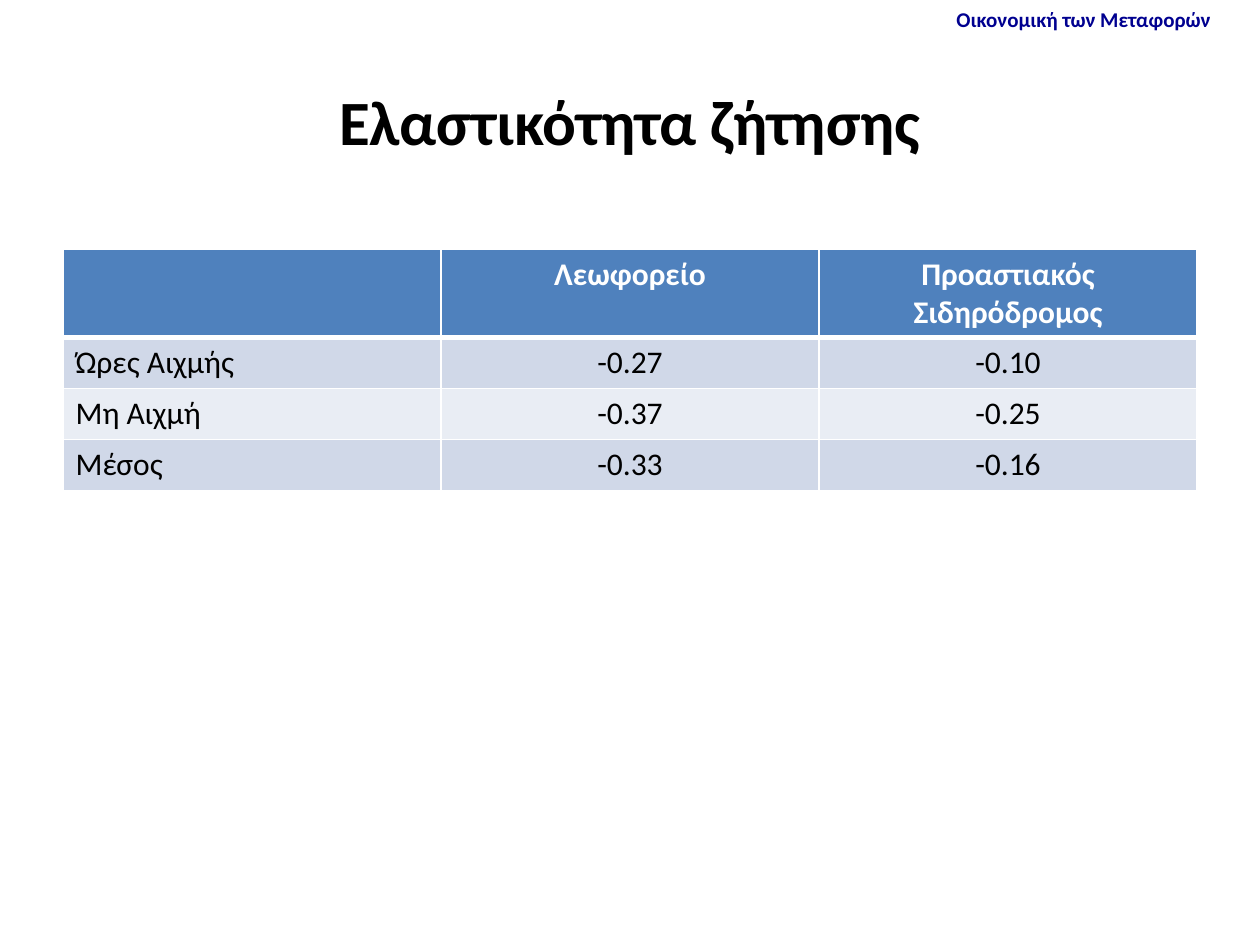
from dataclasses import dataclass

from lxml.etree import SubElement
from pptx import Presentation
from pptx.dml.color import RGBColor
from pptx.enum.text import MSO_ANCHOR, PP_ALIGN
from pptx.oxml.ns import qn
from pptx.util import Emu, Pt

EMU_PER_PX = 914400 / 126


@dataclass
class Row:
    cells: tuple[str, ...]
    fill: str
    height: int
    color: str = "000000"
    bold: bool = False
    bottom: int = 1  # border widths in points
    top: int = 1


def px(n: int) -> Emu:
    return Emu(round(n * EMU_PER_PX))


def rgb(value: str) -> RGBColor:
    return RGBColor.from_string(value)


def place(sp, left: int, top: int, width: int, height: int) -> None:
    sp.left, sp.top, sp.width, sp.height = map(px, (left, top, width, height))


def add_run(p, text: str, size: int, color: str, bold: bool) -> None:
    r = p.add_run()
    r.text = text
    r.font.name = "Calibri"
    r.font.size = Pt(size)
    r.font.bold = bold
    r.font.color.rgb = rgb(color)


def add_border(cell, side: str, width: int) -> None:
    ln = SubElement(cell._tc.get_or_add_tcPr(), qn(f"a:ln{side}"), w=str(Pt(width)))
    SubElement(SubElement(ln, qn("a:solidFill")), qn("a:srgbClr"), val="FFFFFF")


def fill_row(table, index: int, row: Row) -> None:
    table.rows[index].height = px(row.height)
    for col, text in enumerate(row.cells):
        cell = table.cell(index, col)
        # Borders come before the fill in the cell properties
        for side, width in (("L", 1), ("R", 1), ("T", row.top), ("B", row.bottom)):
            add_border(cell, side, width)
        cell.fill.solid()
        cell.fill.fore_color.rgb = rgb(row.fill)
        p = cell.text_frame.paragraphs[0]
        p.alignment = PP_ALIGN.CENTER if col else PP_ALIGN.LEFT
        p.font.size = Pt(18)
        if text:
            add_run(p, text, 18, row.color, row.bold)


ROWS = [
    Row(("", "Λεωφορείο", "Προαστιακός Σιδηρόδρομος"), "4F81BD", 88, "FFFFFF", True, bottom=3),
    Row(("Ώρες Αιχμής", "-0.27", "-0.10"), "D0D8E8", 51, top=3),
    Row(("Μη Αιχμή", "-0.37", "-0.25"), "E9EDF4", 51),
    Row(("Μέσος", "-0.33", "-0.16"), "D0D8E8", 51),
]


def main() -> None:
    prs = Presentation()
    prs.slide_width, prs.slide_height = px(1260), px(945)
    s = prs.slides.add_slide(prs.slide_layouts[5])

    # Course name
    course = s.shapes.add_textbox(px(944), px(0), px(283), px(38))
    tf = course.text_frame
    tf.word_wrap = False
    add_run(tf.paragraphs[0], "Οικονομική των Μεταφορών", 12, "000090", True)

    # Title
    title = s.shapes.title
    place(title, 63, 71, 1134, 98)
    tf = title.text_frame
    tf.word_wrap = True
    tf.vertical_anchor = MSO_ANCHOR.MIDDLE
    p = tf.paragraphs[0]
    p.alignment = PP_ALIGN.CENTER
    add_run(p, "Ελαστικότητα ζήτησης", 36, "000000", True)

    # Elasticity table
    height = sum(row.height for row in ROWS)
    frame = s.shapes.add_table(len(ROWS), 3, px(63), px(249), px(1134), px(height))
    for index, row in enumerate(ROWS):
        fill_row(frame.table, index, row)

    prs.save("out.pptx")


if __name__ == "__main__":
    main()
